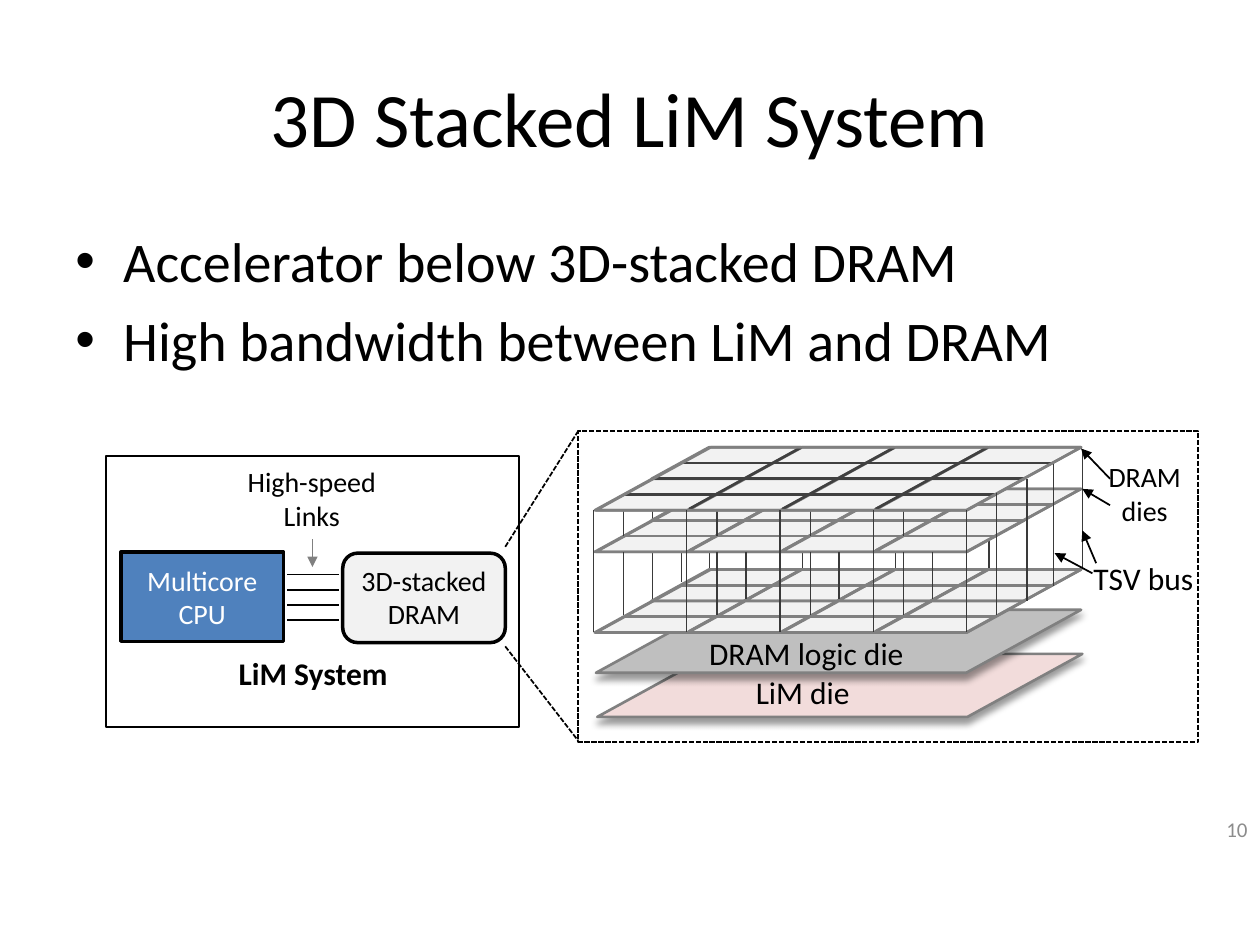
from dataclasses import dataclass
from typing import Any

from lxml import etree
from pptx import Presentation
from pptx.dml.color import RGBColor
from pptx.enum.dml import MSO_LINE
from pptx.enum.shapes import MSO_CONNECTOR, MSO_SHAPE
from pptx.enum.text import MSO_ANCHOR, PP_ALIGN
from pptx.oxml.ns import qn
from pptx.util import Inches, Pt

RECTANGLE, ROUNDED = MSO_SHAPE.RECTANGLE, MSO_SHAPE.ROUNDED_RECTANGLE
PARALLELOGRAM = MSO_SHAPE.PARALLELOGRAM
STRAIGHT = MSO_CONNECTOR.STRAIGHT
DASH = MSO_LINE.SQUARE_DOT
LEFT, CENTER, RIGHT = PP_ALIGN.LEFT, PP_ALIGN.CENTER, PP_ALIGN.RIGHT
TOP, MIDDLE = MSO_ANCHOR.TOP, MSO_ANCHOR.MIDDLE
BLACK = RGBColor(0x00, 0x00, 0x00)
WHITE = RGBColor(0xFF, 0xFF, 0xFF)
BLUE = RGBColor(0x4F, 0x81, 0xBD)
PINK = RGBColor(0xF2, 0xDC, 0xDB)
SILVER = RGBColor(0xBF, 0xBF, 0xBF)
PALE = RGBColor(0xF2, 0xF2, 0xF2)
GRAY = RGBColor(0x80, 0x80, 0x80)
CHARCOAL = RGBColor(0x40, 0x40, 0x40)
UPRIGHT = RGBColor(0x3A, 0x3A, 0x3A)
NUMBER = RGBColor(0x8C, 0x8C, 0x8C)
FONT = "Calibri"
SLANT = 1.824
PITCH = 0.74


def write(frame, lines, size, color=BLACK, align=CENTER, anchor=TOP, bold=False, wrap=False):
    """Fill a text frame with one paragraph for each line."""
    for name, value in {"word_wrap": wrap, "vertical_anchor": anchor}.items():
        setattr(frame, name, value)
    for index, line in enumerate(lines):
        para = frame.add_paragraph() if index else frame.paragraphs[0]
        para.alignment = align
        span = para.add_run()
        span.text = line
        for name, value in {"name": FONT, "size": Pt(size), "bold": bold}.items():
            setattr(span.font, name, value)
        span.font.color.rgb = color


@dataclass
class Region:
    """An area of the page whose parts are placed from its top left corner."""

    page: Any
    left: float
    top: float

    def point(self, across, down):
        """Turn an offset in the region into a place on the page."""
        return Inches(self.left + across), Inches(self.top + down)

    def shape(self, kind, box, fill=None, ink=BLACK, width=1.5, dash=None):
        """Add a preset shape without shadow."""
        shape = self.page.shapes.add_shape(
            kind, *self.point(*box[:2]), Inches(box[2]), Inches(box[3]))
        shape.shadow.inherit = False
        if kind == PARALLELOGRAM:
            shape.adjustments[0] = SLANT
        if fill is None:
            shape.fill.background()
        else:
            shape.fill.solid()
            shape.fill.fore_color.rgb = fill
        shape.line.color.rgb = ink
        shape.line.width = Pt(width)
        shape.line.dash_style = dash
        return shape

    def line(self, start, end, ink=BLACK, width=1, dash=None, arrow=False):
        """Add a straight connector, with an arrowhead at its end if asked."""
        line = self.page.shapes.add_connector(STRAIGHT, *self.point(*start), *self.point(*end))
        line.line.color.rgb = ink
        line.line.width = Pt(width)
        line.line.dash_style = dash
        properties = line._element.spPr
        if arrow:
            etree.SubElement(properties.find(qn("a:ln")), qn("a:tailEnd"), type="triangle")
        etree.SubElement(properties, qn("a:effectLst"))

    def label(self, box, lines, size=18, **style):
        """Add a text box."""
        label = self.page.shapes.add_textbox(
            *self.point(*box[:2]), Inches(box[2]), Inches(box[3]))
        write(label.text_frame, lines, size, **style)
        return label

    def uprights(self, first, top, bottom, count=1, step=PITCH):
        """Add evenly spaced vertical lines."""
        for index in range(count):
            across = first + index * step
            self.line((across, top), (across, bottom), UPRIGHT, 0.75)


def cast_shadow(shape):
    """Give a shape a soft shadow below it."""
    effects = shape._element.spPr.find(qn("a:effectLst"))
    shadow = etree.SubElement(effects, qn("a:outerShdw"), blurRad=str(Pt(4)),
                              dist=str(Pt(3)), dir="5400000", rotWithShape="0")
    color = etree.SubElement(shadow, qn("a:srgbClr"), val="000000")
    etree.SubElement(color, qn("a:alpha"), val="40000")


def add_title(page, text):
    """Place and format the title placeholder."""
    title = page.shapes.title
    places = {"left": 0.5, "top": 0.3, "width": 9, "height": 1.25}
    for name, value in places.items():
        setattr(title, name, Inches(value))
    write(title.text_frame, [text], 44, anchor=MIDDLE, wrap=True)


def add_bullets(region, lines):
    """Add the bulleted list."""
    body = region.label((0, 0, 9, 1.5), lines, 32, align=LEFT, wrap=True)
    for index, para in enumerate(body.text_frame.paragraphs):
        properties = para._p.get_or_add_pPr()
        for name, value in {"marL": 0.38, "indent": -0.38}.items():
            properties.set(name, str(Inches(value)))
        etree.SubElement(properties, qn("a:buFont"), typeface="Arial")
        etree.SubElement(properties, qn("a:buChar"), char="•")
        if index:
            para.space_before = Pt(6.4)


def add_system(region):
    """Draw the processor, the memory and the links between them."""
    region.shape(RECTANGLE, (0, 0, 3.28, 2.15), width=1.25)
    processor = region.shape(RECTANGLE, (0.12, 0.76, 1.29, 0.71), BLUE, width=2)
    write(processor.text_frame, ["Multicore", "CPU"], 16, color=WHITE, anchor=MIDDLE)
    region.shape(ROUNDED, (1.88, 0.77, 1.29, 0.71), PALE, width=2)
    region.label((1.82, 0.8, 1.41, 0.64), ["3D-stacked DRAM"], 16, wrap=True)
    region.label((0.82, 1.52, 1.65, 0.4), ["LiM System"], bold=True, wrap=True)
    for index in range(4):
        down = 0.94 + 0.12 * index
        region.line((1.44, down), (1.85, down))
    region.label((1.02, 0.02, 1.23, 0.64), ["High-speed", "Links"], 16)
    region.line((1.64, 0.66), (1.64, 0.88), GRAY, arrow=True)


def add_memory_die(region, top, ink=GRAY):
    """Draw one memory die as two rows of four tiles under a grid."""
    for row, left in enumerate((0.58, 0.13)):
        for column in range(4):
            box = (left + PITCH * column, top + 0.25 * row, 1.19, 0.25)
            region.shape(PARALLELOGRAM, box, PALE, GRAY)
    for row in range(1, 4):
        left, down = 1.04 - 0.225 * row, top + 0.125 * row
        region.line((left, down), (left + 2.95, down), ink, 1.5)
    for column in range(3):
        left = 0.88 + PITCH * column
        region.line((left, top + 0.49), (left + 0.89, top), ink, 1.5)
    region.shape(PARALLELOGRAM, (0.14, top, 3.85, 0.5), ink=GRAY)


def add_stack(region):
    """Draw the enlarged stack of dies with its buses and labels."""
    region.shape(RECTANGLE, (0, 0, 4.92, 2.47), width=1, dash=DASH)
    for down, end in ((0.92, 0), (1.71, 2.46)):
        region.line((-0.58, down), (0, end), dash=DASH)
    for left, top, fill in ((0.15, 1.77, PINK), (0.14, 1.42, SILVER)):
        cast_shadow(region.shape(PARALLELOGRAM, (left, top, 3.85, 0.5), fill, GRAY))
    region.uprights(0.82, 0.24, 1.2)
    region.uprights(0.59, 0.38, 1.34)
    region.uprights(1.04, 0.13, 1.43, 4)
    add_memory_die(region, 1.1)
    add_memory_die(region, 0.46)
    region.uprights(0.36, 0.5, 0.83, 4)
    add_memory_die(region, 0.13, CHARCOAL)
    region.uprights(0.36, 0.96, 1.46, 4)
    region.uprights(1.33, 0.96, 1.33, 3)
    region.uprights(0.12, 0.63, 1.6, 5)
    for left, top, bottom in ((3.32, 0.49, 1.46), (3.56, 0.38, 1.35),
                              (3.77, 0.26, 1.23), (4, 0.15, 1.09)):
        region.uprights(left, top, bottom)
    for start, end in (((4.22, 0.59), (4, 0.46)), ((4.22, 0.38), (3.99, 0.14)),
                       ((4.11, 1.05), (4, 0.79)), ((4.08, 1.13), (3.78, 0.97))):
        region.line(start, end, arrow=True)
    region.label((0.94, 1.56, 1.76, 0.4), ["DRAM logic die"], align=LEFT)
    region.label((1.31, 1.87, 0.96, 0.4), ["LiM die"], align=LEFT)
    region.label((4.08, 0.18, 0.83, 0.64), ["DRAM dies"], 16, wrap=True)
    region.label((3.99, 0.97, 1.01, 0.4), ["TSV bus"], align=LEFT)


def main():
    """Build the deck and save it."""
    deck = Presentation()
    deck.slide_width, deck.slide_height = Inches(10), Inches(7.5)
    page = deck.slides.add_slide(deck.slide_layouts[5])
    add_title(page, "3D Stacked LiM System")
    add_bullets(Region(page, 0.5, 1.75), ["Accelerator below 3D-stacked DRAM",
                                          "High bandwidth between LiM and DRAM"])
    add_stack(Region(page, 4.59, 3.42))
    add_system(Region(page, 0.84, 3.62))
    Region(page, 7.67, 6.38).label((0, 0, 2.33, 0.4), ["10"], 12, color=NUMBER,
                                   align=RIGHT, anchor=MIDDLE, wrap=True)
    deck.save("out.pptx")


if __name__ == "__main__":
    main()
